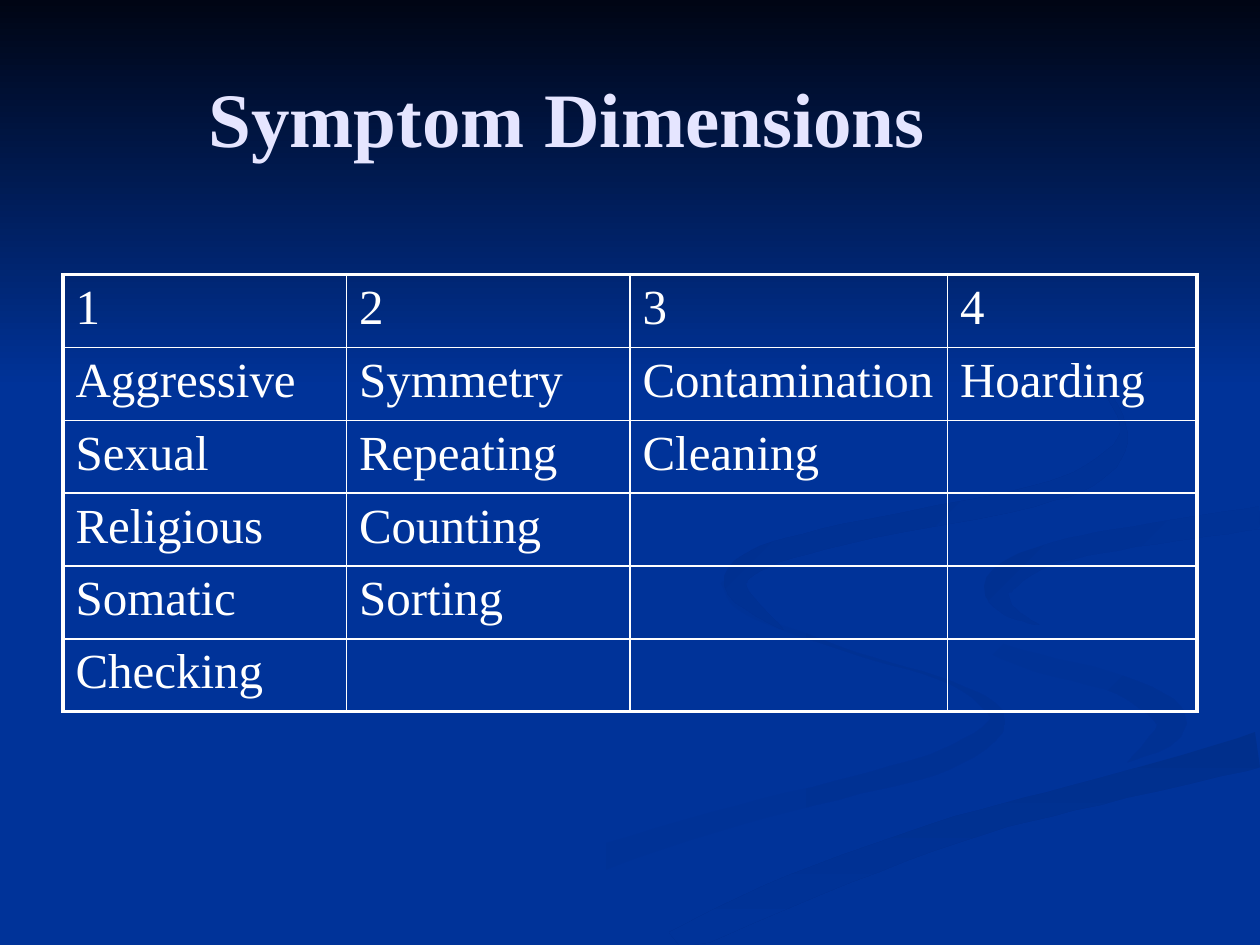
from dataclasses import dataclass
from math import hypot

from lxml import etree
from pptx import Presentation
from pptx.dml.color import RGBColor
from pptx.enum.text import MSO_ANCHOR, MSO_AUTO_SIZE, PP_ALIGN
from pptx.enum.shapes import MSO_SHAPE
from pptx.oxml.ns import qn
from pptx.util import Inches, Pt

CENTER = PP_ALIGN.CENTER
MIDDLE = MSO_ANCHOR.MIDDLE
NO_AUTOFIT = MSO_AUTO_SIZE.NONE
RECTANGLE = MSO_SHAPE.RECTANGLE
TITLE_ONLY = 5


@dataclass(frozen=True)
class Theme:
    font: str = "Times New Roman"
    blue: str = "003399"
    night: str = "000514"
    title: str = "E5E5FF"
    text: str = "FFFFFF"
    title_size: float = 44
    cell_size: float = 28
    outer_line: float = 2.25
    inner_line: float = 1


@dataclass(frozen=True)
class Ribbon:
    """A smooth band: nodes are (x, y, thickness) in inches along its middle."""
    nodes: tuple
    first: str
    last: str
    angle: int = 0


THEME = Theme()
SLIDE_W, SLIDE_H = 10, 7.5
WIDTH, HEIGHT = Inches(SLIDE_W), Inches(SLIDE_H)
STEPS = 6  # curve points between two nodes
UNITS = 100  # outline units per inch

# Dimensions read down the columns
DIMENSIONS = [
    ["1", "Aggressive", "Sexual", "Religious", "Somatic", "Checking"],
    ["2", "Symmetry", "Repeating", "Counting", "Sorting"],
    ["3", "Contamination", "Cleaning"],
    ["4", "Hoarding"],
]
COLUMN_SHARES = [0.25, 0.25, 0.28, 0.22]

CENTRAL = Ribbon(((10, 3.95, 0.15), (8.6, 4.17, 0.15), (7.55, 4.6, 0.5),
                  (8.6, 5.2, 0.2), (9.7, 5.65, 0.5), (8, 6.35, 0.1),
                  (4.9, 7.49, 0.2)), THEME.blue, THEME.blue)
LEFT = Ribbon(((3.3, 7.49, 0.3), (4.4, 6.95, 0.22), (5.65, 6.53, 0.16),
               (6.8, 6.23, 0.15), (7.5, 6.03, 0.17), (7.92, 5.72, 0.13),
               (7.55, 5.42, 0.03), (6.8, 5.19, 0.02), (5.95, 4.87, 0.05),
               (5.73, 4.62, 0.03)), THEME.blue, "003193")
WAVE = Ribbon(((7.24, 4.64, 0.01), (7.4, 4.91, 0.05), (8.1, 5.22, 0.13),
               (8.9, 5.44, 0.16), (9.3, 5.74, 0.24), (8.95, 6.05, 0.01)),
              THEME.blue, "003193", 45)
SWEEP = Ribbon(((5.35, 7.49, 0.2), (6.3, 7.06, 0.24), (7.6, 6.58, 0.2),
                (8.7, 6.29, 0.2), (10, 5.95, 0.28)), "002F8C", THEME.blue, 90)
HOOK = Ribbon(((10, 4.11, 0.18), (9, 4.26, 0.17), (8.3, 4.41, 0.18),
               (7.93, 4.64, 0.23), (8, 4.84, 0.1), (8.25, 4.96, 0.01)),
              "003091", THEME.blue, 45)
UPPER = Ribbon(((7.62, 2.33, 0.01), (8.55, 2.87, 0.03), (8.91, 3.37, 0.05),
                (8.75, 3.7, 0.16), (8.2, 3.94, 0.16), (6.7, 4.24, 0.16),
                (6, 4.45, 0.18), (5.85, 4.68, 0.16), (6.22, 5, 0.01)),
               "002F8E", THEME.blue, 45)
RIBBONS = [CENTRAL, LEFT, WAVE, SWEEP, HOOK, UPPER]  # back to front


def rgb(value):
    return RGBColor.from_string(value)


def smooth(nodes):
    """Run a Catmull-Rom curve through the nodes, thickness included."""
    padded = [nodes[0], *nodes, nodes[-1]]
    curve = []
    for quad in zip(padded, padded[1:], padded[2:], padded[3:]):
        for step in range(STEPS):
            t = step / STEPS
            curve.append([b + t * (c - a) / 2
                          + t * t * (2 * a - 5 * b + 4 * c - d) / 2
                          + t ** 3 * (3 * b - a - 3 * c + d) / 2
                          for a, b, c, d in zip(*quad)])
    return curve + [nodes[-1]]


def ribbon_outline(nodes):
    """Step half the thickness to either side of the curve, within the slide."""
    curve = smooth(nodes)
    sides = [], []
    for i, (x, y, thickness) in enumerate(curve):
        before, after = curve[max(i - 1, 0)], curve[min(i + 1, len(curve) - 1)]
        dx, dy = after[0] - before[0], after[1] - before[1]
        half = thickness / 2 / hypot(dx, dy)
        for side, sign in zip(sides, (1, -1)):
            px, py = x - sign * dy * half, y + sign * dx * half
            side.append((min(px, SLIDE_W) * UNITS, min(py, SLIDE_H) * UNITS))
    return sides[0] + sides[1][::-1]


def paint(sp, first, last, angle):
    """Fill without outline; the gradient angle runs clockwise."""
    sp.shadow.inherit = False
    sp.line.fill.background()
    if first == last:
        sp.fill.solid()
        sp.fill.fore_color.rgb = rgb(first)
        return
    sp.fill.gradient()
    sp.fill.gradient_angle = -angle % 360
    for stop, color in zip(sp.fill.gradient_stops, (first, last)):
        stop.color.rgb = rgb(color)


def add_ribbon(s, ribbon):
    start, *rest = ribbon_outline(ribbon.nodes)
    builder = s.shapes.build_freeform(*start, scale=Inches(1) / UNITS)
    builder.add_line_segments(rest, close=True)
    paint(builder.convert_to_shape(), ribbon.first, ribbon.last, ribbon.angle)


def add_backdrop(s):
    s.background.fill.solid()
    s.background.fill.fore_color.rgb = rgb(THEME.blue)
    for ribbon in RIBBONS:
        add_ribbon(s, ribbon)
    night_sky = s.shapes.add_shape(RECTANGLE, 0, 0, WIDTH, int(HEIGHT * 0.41))
    paint(night_sky, THEME.night, THEME.blue, 90)


def style_font(p, size, color, bold=False):
    p.font.name, p.font.size, p.font.bold = THEME.font, Pt(size), bold
    p.font.color.rgb = rgb(color)


def add_title(s, text):
    sp = s.shapes.title
    s.shapes.element.append(sp.element)  # bring in front of the backdrop
    sp.left, sp.top = 0, int(HEIGHT * 0.04)
    sp.width, sp.height = int(WIDTH * 0.9), Inches(1.25)
    tf = sp.text_frame
    tf.text = text
    tf.auto_size = NO_AUTOFIT
    tf.vertical_anchor = MIDDLE
    p = tf.paragraphs[0]
    p.alignment = CENTER
    style_font(p, THEME.title_size, THEME.title, bold=True)


def set_border(cell, side, width):
    tc_pr = cell._tc.get_or_add_tcPr()
    ln = etree.SubElement(tc_pr, qn(f"a:ln{side}"), w=str(Pt(width)))
    fill = etree.SubElement(ln, qn("a:solidFill"))
    etree.SubElement(fill, qn("a:srgbClr"), val=THEME.text)


def add_dimension_table(s):
    rows, cols = max(map(len, DIMENSIONS)), len(DIMENSIONS)
    width = int(WIDTH * 0.9)
    table = s.shapes.add_table(rows, cols, int(WIDTH * 0.05), Inches(2.18),
                               width, Inches(3.47)).table
    table.first_row = table.horz_banding = False
    for c, (share, entries) in enumerate(zip(COLUMN_SHARES, DIMENSIONS)):
        table.columns[c].width = int(width * share)
        for r in range(rows):
            cell = table.cell(r, c)
            cell.text = entries[r] if r < len(entries) else ""
            style_font(cell.text_frame.paragraphs[0], THEME.cell_size, THEME.text)
            outer = {"L": c == 0, "R": c == cols - 1, "T": r == 0, "B": r == rows - 1}
            for side, is_outer in outer.items():
                set_border(cell, side, THEME.outer_line if is_outer else THEME.inner_line)
            cell.fill.background()


def main():
    prs = Presentation()
    prs.slide_width, prs.slide_height = WIDTH, HEIGHT
    s = prs.slides.add_slide(prs.slide_layouts[TITLE_ONLY])
    add_backdrop(s)
    add_title(s, "Symptom Dimensions")
    add_dimension_table(s)
    prs.save("out.pptx")


if __name__ == "__main__":
    main()
